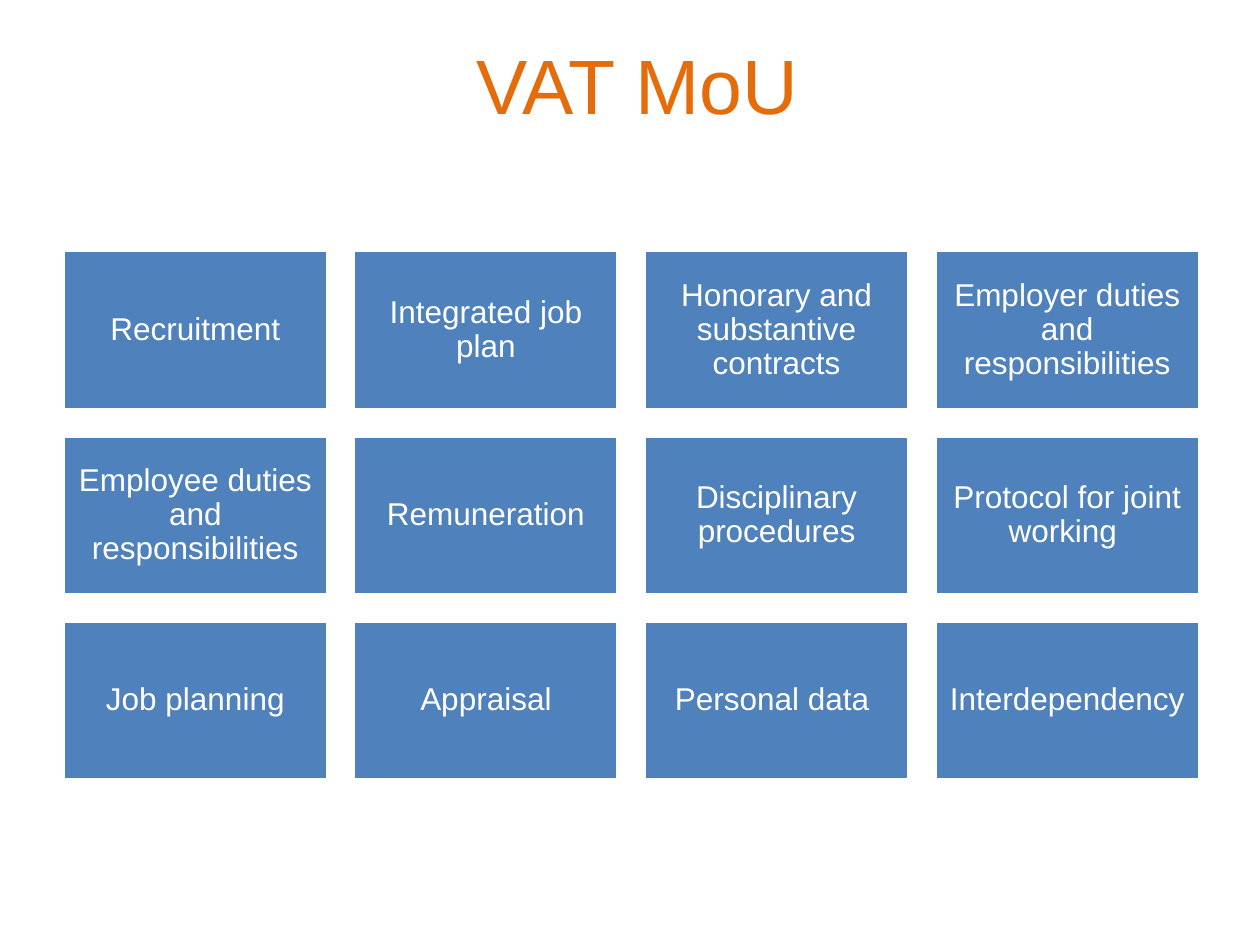
"""Build the VAT MoU slide: a title above a grid of topic boxes."""
from dataclasses import dataclass

from pptx import Presentation
from pptx.dml.color import RGBColor
from pptx.enum.shapes import MSO_SHAPE
from pptx.enum.text import MSO_ANCHOR, MSO_AUTO_SIZE, PP_ALIGN
from pptx.util import Inches, Pt

TITLE = "VAT MoU"
TOPICS = [
    ["Recruitment", "Integrated job plan",
     "Honorary and substantive contracts",
     "Employer duties and responsibilities"],
    ["Employee duties and responsibilities", "Remuneration",
     "Disciplinary procedures", "Protocol for joint working "],
    ["Job planning", "Appraisal", "Personal data ", "Interdependency"],
]


@dataclass(frozen=True)
class Theme:
    font: str = "Arial"
    head: RGBColor = RGBColor(0xE4, 0x6C, 0x0A)
    box: RGBColor = RGBColor(0x4F, 0x81, 0xBD)
    white: RGBColor = RGBColor(0xFF, 0xFF, 0xFF)
    big: int = 44
    small: int = 18


THEME = Theme()
LEFT, TOP, RIGHT, BASE = 0.5, 1.99, 9.52, 6.19
WIDE, HIGH = 2.1, 1.26
INSET = 0.07


def write(frame, text, *, size, color, inset=None, anchor=MSO_ANCHOR.TOP,
          lead=None, after=0):
    frame.word_wrap = True
    frame.vertical_anchor = anchor
    if inset is not None:
        frame.margin_left = frame.margin_right = Inches(inset)
        frame.margin_top = frame.margin_bottom = Inches(inset)
    para = frame.paragraphs[0]
    para.alignment = PP_ALIGN.CENTER
    para.line_spacing = lead
    para.space_after = Pt(size * after)
    run = para.add_run()
    run.text = text
    run.font.name = THEME.font
    run.font.size = Pt(size)
    run.font.color.rgb = color


def add_box(slide, text, left, top):
    box = slide.shapes.add_shape(MSO_SHAPE.RECTANGLE, Inches(left),
                                 Inches(top), Inches(WIDE), Inches(HIGH))
    box.shadow.inherit = False
    box.fill.solid()
    box.fill.fore_color.rgb = THEME.box
    box.line.color.rgb = THEME.white
    box.line.width = Pt(2)
    write(box.text_frame, text, size=THEME.small, color=THEME.white,
          inset=INSET, anchor=MSO_ANCHOR.MIDDLE, lead=0.9, after=0.35)


def main():
    deck = Presentation()
    deck.slide_width, deck.slide_height = Inches(10), Inches(7.5)
    slide = deck.slides.add_slide(deck.slide_layouts[6])

    head = slide.shapes.add_textbox(Inches(0.34), Inches(0.25),
                                    Inches(9.44), Inches(0.84))
    write(head.text_frame, TITLE, size=THEME.big, color=THEME.head)
    head.text_frame.auto_size = MSO_AUTO_SIZE.SHAPE_TO_FIT_TEXT

    across = (RIGHT - LEFT - WIDE) / (len(TOPICS[0]) - 1)
    down = (BASE - TOP - HIGH) / (len(TOPICS) - 1)
    for row, texts in enumerate(TOPICS):
        for col, text in enumerate(texts):
            add_box(slide, text, LEFT + col * across, TOP + row * down)

    deck.save("out.pptx")


if __name__ == "__main__":
    main()
